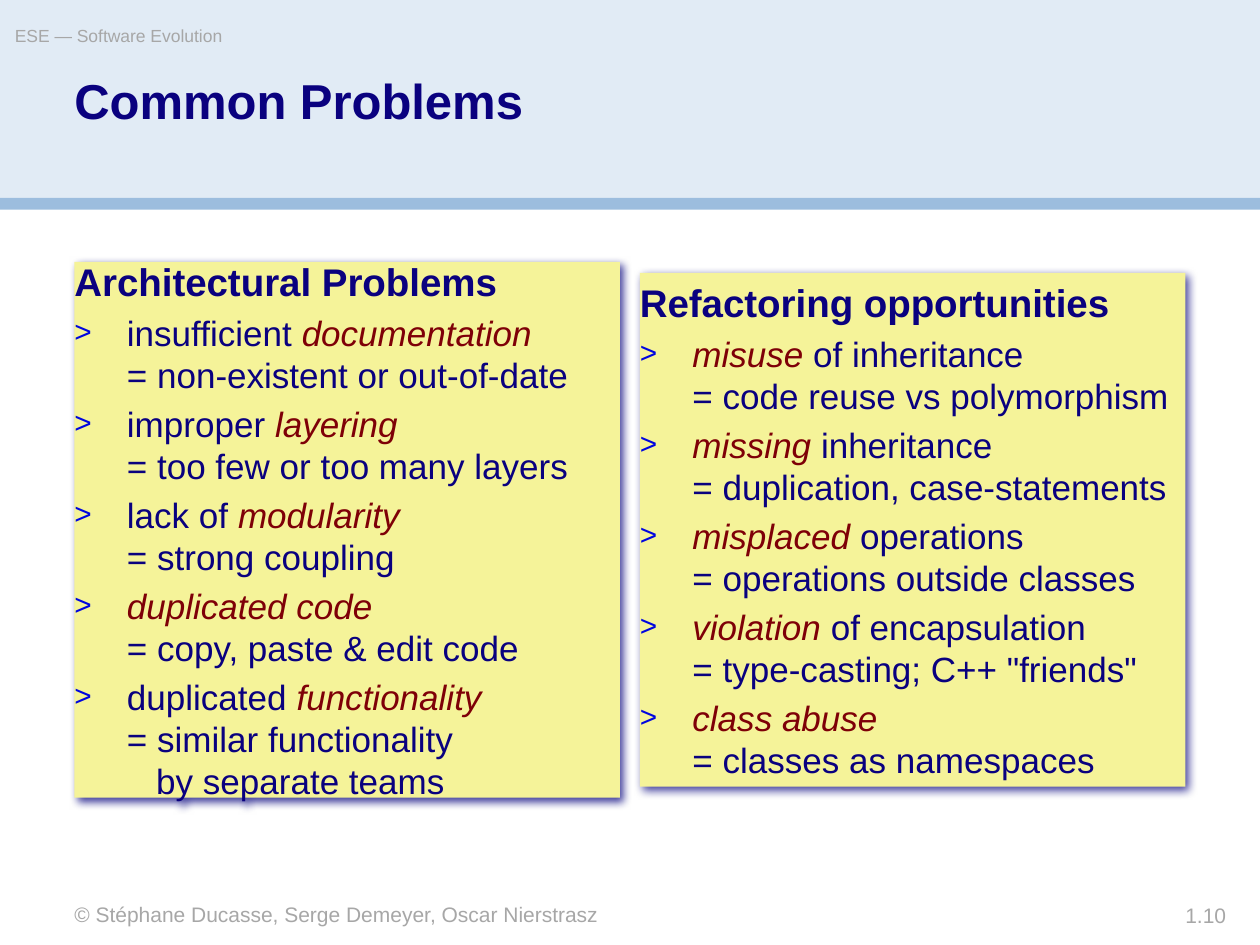
import pptx
import pptx.dml.color
import pptx.enum.shapes
import pptx.enum.text
import pptx.oxml
import pptx.oxml.ns
import pptx.util
from pptx.util import Cm, Pt

THEME = {
    "font": "Arial",
    "text": "0A017F", "emphasis": "7E0007", "bullet": "0005DF", "muted": "A7A7A7",
    "header": "E1EBF5", "rule": "9CBDDE", "panel": "F5F399", "shadow": "05027D",
    "title_size": 28, "heading_size": 22, "body_size": 20, "footer_size": 12, "label_size": 10,
}

TITLE = "Common Problems"

# Each item is a list of lines, each line a list of runs; *starred* runs are emphasised.
PANELS = [
    {"heading": "Architectural Problems", "height": 10.8, "items": [
        [["insufficient ", "*documentation*"], ["= non-existent or out-of-date"]],
        [["improper ", "*layering*"], ["= too few or too many layers"]],
        [["lack of ", "*modularity*"], ["= strong coupling"]],
        [["*duplicated code*"], ["= copy, paste & edit code"]],
        [["duplicated ", "*functionality*"], ["= similar functionality"]],
    ], "continuation": "by separate teams"},
    {"heading": "Refactoring opportunities", "height": 10.36, "items": [
        [["*misuse*", " of inheritance"], ["= code reuse vs polymorphism"]],
        [["*missing*", " inheritance"], ["= duplication, case-statements"]],
        [["*misplaced*", " operations"], ["= operations outside classes"]],
        [["*violation*", " of encapsulation"], ["= type-casting; C++ \"friends\""]],
        [["*class abuse*"], ["= classes as namespaces"]],
    ], "continuation": None},
]

# text, (left, top, width, height) in cm, size, aligned right, wraps
SMALL_TEXTS = [
    ("© Stéphane Ducasse, Serge Demeyer, Oscar Nierstrasz", (1.5, 18.18, 10.6, 0.5),
     THEME["footer_size"], False, True),
    ("1.10", (20.96, 18.2, 3.76, 0.5), THEME["footer_size"], True, True),
    ("ESE — Software Evolution", (0.3, 0.5, 15, 0.7), THEME["label_size"], False, False),
]

MARGIN, PANEL_WIDTH, PANEL_PITCH, PANEL_MIDDLE = 1.5, 11, 11.4, 10.68
HANGING, CONTINUATION_INDENT = 1.06, 1.65


def color(name):
    return pptx.dml.color.RGBColor.from_string(THEME[name])


def add_run(paragraph, text, size, color_name="text", bold=False, italic=False):
    run = paragraph.add_run()
    run.text = text
    run.font.name = THEME["font"]
    run.font.size = Pt(size)
    run.font.bold = bold
    run.font.italic = italic
    run.font.color.rgb = color(color_name)


def set_frame(frame, anchor, wrap=True):
    frame.margin_left = frame.margin_top = frame.margin_right = frame.margin_bottom = 0
    frame.word_wrap = wrap
    frame.auto_size = pptx.enum.text.MSO_AUTO_SIZE.NONE
    frame.vertical_anchor = anchor


def add_rectangle(slide, box, fill):
    shape = slide.shapes.add_shape(
        pptx.enum.shapes.MSO_SHAPE.RECTANGLE, *[Cm(value) for value in box])
    shape.shadow.inherit = False
    shape.fill.solid()
    shape.fill.fore_color.rgb = color(fill)
    shape.line.fill.background()
    return shape


def add_shadow(shape):
    effects = shape._element.spPr.find(pptx.oxml.ns.qn("a:effectLst"))
    effects.append(pptx.oxml.parse_xml(
        f'<a:outerShdw {pptx.oxml.ns.nsdecls("a")} blurRad="{Pt(5)}" dist="{Pt(3)}" '
        f'dir="{45 * 60000}" algn="ctr" rotWithShape="0"><a:srgbClr val="{THEME["shadow"]}">'
        '<a:alpha val="75000"/></a:srgbClr></a:outerShdw>'))


def format_paragraph(paragraph, left, indent, space_before, bullet=False):
    paragraph.alignment = pptx.enum.text.PP_ALIGN.LEFT
    paragraph.line_spacing = 1.0
    paragraph.space_before = Pt(space_before)
    properties = paragraph._p.get_or_add_pPr()
    properties.set("marL", str(Cm(left)))
    properties.set("indent", str(Cm(indent)))
    if bullet:
        namespace = pptx.oxml.ns.nsdecls("a")
        for element in (
                f'<a:buClr {namespace}><a:srgbClr val="{THEME["bullet"]}"/></a:buClr>',
                f'<a:buSzPct {namespace} val="85000"/>',
                f'<a:buFont {namespace} typeface="{THEME["font"]}"/>',
                f'<a:buChar {namespace} char="&gt;"/>'):
            properties.append(pptx.oxml.parse_xml(element))


def add_panel(slide, panel, left):
    height = panel["height"]
    shape = add_rectangle(
        slide, (left, PANEL_MIDDLE - height / 2, PANEL_WIDTH, height), "panel")
    add_shadow(shape)
    frame = shape.text_frame
    set_frame(frame, pptx.enum.text.MSO_ANCHOR.MIDDLE)
    heading = frame.paragraphs[0]
    format_paragraph(heading, HANGING, -HANGING, 0)
    add_run(heading, panel["heading"], THEME["heading_size"], bold=True)
    for lines in panel["items"]:
        paragraph = frame.add_paragraph()
        format_paragraph(paragraph, HANGING, -HANGING, 4, bullet=True)
        for number, line in enumerate(lines):
            if number:
                paragraph.add_line_break()
            for text in line:
                emphasised = text.startswith("*")
                add_run(paragraph, text.strip("*"), THEME["body_size"],
                        "emphasis" if emphasised else "text", italic=emphasised)
    if panel["continuation"]:
        paragraph = frame.add_paragraph()
        format_paragraph(paragraph, CONTINUATION_INDENT, 0, 0)
        add_run(paragraph, panel["continuation"], THEME["body_size"])


def add_title(slide):
    title = slide.shapes.title
    title.left, title.top, title.width, title.height = Cm(1.5), Cm(1.55), Cm(22.43), Cm(2.26)
    set_frame(title.text_frame, pptx.enum.text.MSO_ANCHOR.TOP)
    paragraph = title.text_frame.paragraphs[0]
    paragraph.alignment = pptx.enum.text.PP_ALIGN.LEFT
    paragraph.line_spacing = 0.9
    add_run(paragraph, TITLE, THEME["title_size"], bold=True)
    slide.shapes._spTree.append(title._element)  # bring in front of the header band


def add_small_text(slide, text, box, size, right, wrap):
    shape = slide.shapes.add_textbox(*[Cm(value) for value in box])
    set_frame(shape.text_frame, pptx.enum.text.MSO_ANCHOR.TOP, wrap)
    paragraph = shape.text_frame.paragraphs[0]
    alignments = pptx.enum.text.PP_ALIGN
    paragraph.alignment = alignments.RIGHT if right else alignments.LEFT
    add_run(paragraph, text, size, "muted")


def main():
    presentation = pptx.Presentation()
    presentation.slide_width, presentation.slide_height = Cm(25.4), Cm(19.05)
    slide = presentation.slides.add_slide(presentation.slide_layouts[5])
    add_rectangle(slide, (0, 0, 25.4, 4.01), "header")
    add_rectangle(slide, (0, 3.99, 25.4, 0.24), "rule")
    add_title(slide)
    for column, panel in enumerate(PANELS):
        add_panel(slide, panel, MARGIN + column * PANEL_PITCH)
    for small_text in SMALL_TEXTS:
        add_small_text(slide, *small_text)
    presentation.save("out.pptx")


if __name__ == "__main__":
    main()
